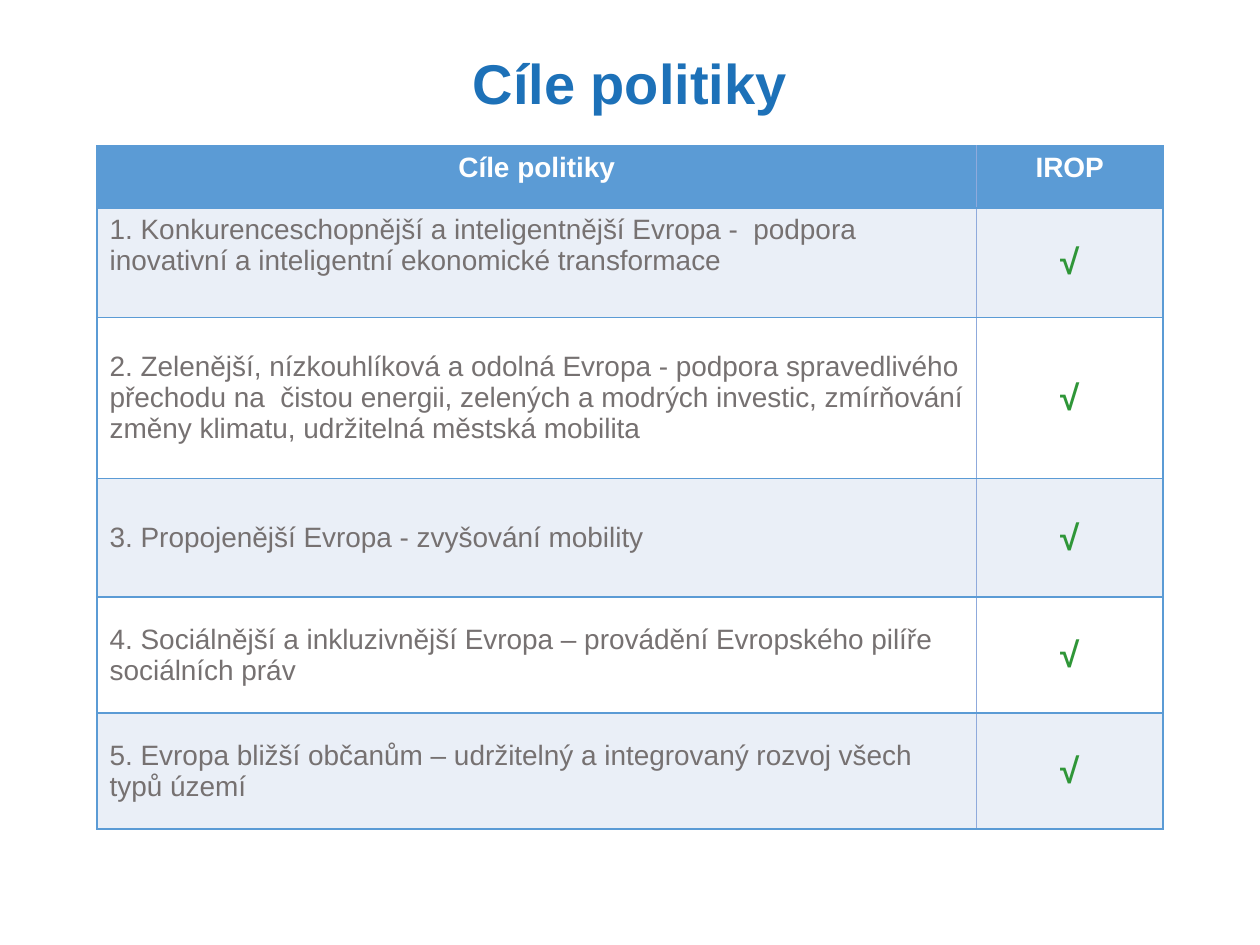
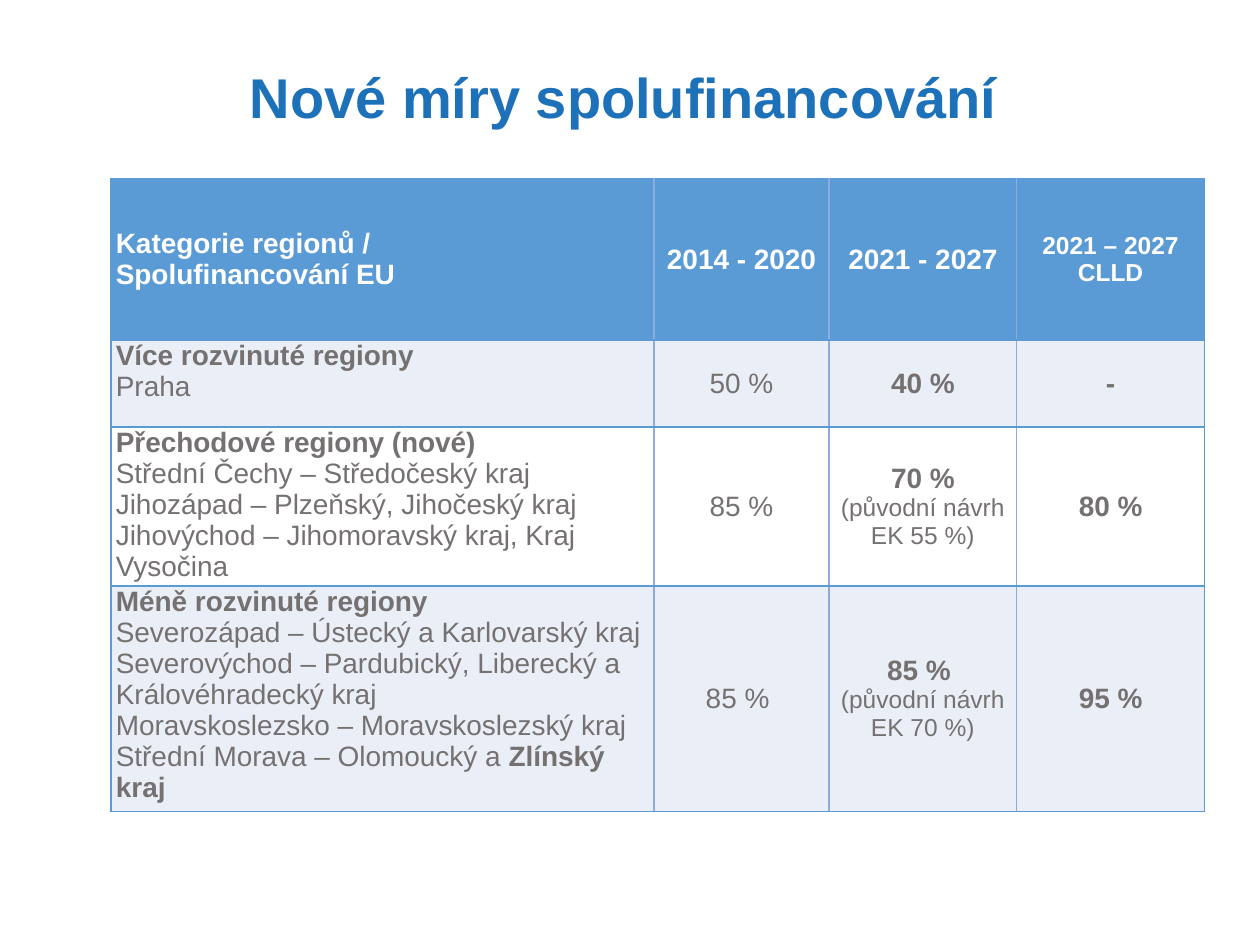
from dataclasses import dataclass

from lxml.etree import SubElement
from pptx import Presentation
from pptx.dml.color import RGBColor
from pptx.enum.text import MSO_ANCHOR as ANCHOR, MSO_AUTO_SIZE as AUTO_SIZE, PP_ALIGN as ALIGN
from pptx.oxml.ns import qn
from pptx.util import Inches, Pt

FONT = "Arial"
TITLE_BLUE = RGBColor(0x1D, 0x71, 0xB8)
HEADER_BLUE = RGBColor(0x5B, 0x9B, 0xD5)
DIVIDER_BLUE = RGBColor(0x8F, 0xAA, 0xDC)
BAND = RGBColor(0xEA, 0xEF, 0xF7)
WHITE = RGBColor(0xFF, 0xFF, 0xFF)
GREY = RGBColor(0x76, 0x71, 0x71)
GREEN = RGBColor(0x2F, 0x96, 0x38)


@dataclass
class Span:
    text: str
    bold: bool = False
    size: int = 16
    color: RGBColor = GREY


def bold(text, size=16, color=GREY):
    return Span(text, True, size, color)


def head(text, size=16):
    return bold(text, size, WHITE)


class Deck:
    def __init__(self):
        self.prs = Presentation()
        self.prs.slide_width, self.prs.slide_height = Inches(10), Inches(7.5)
        self.slide = None

    def add_slide(self, title, left, top, width, height):
        self.slide = self.prs.slides.add_slide(self.prs.slide_layouts[5])
        sp = self.slide.shapes.title
        sp.left, sp.top, sp.width, sp.height = map(Inches, (left, top, width, height))
        tf = sp.text_frame
        tf.word_wrap, tf.auto_size = True, AUTO_SIZE.NONE
        tf.vertical_anchor = ANCHOR.MIDDLE
        p = tf.paragraphs[0]
        p.line_spacing = 0.9
        self.add_spans(p, [bold(title, 32, TITLE_BLUE)], ALIGN.CENTER)

    def add_spans(self, p, spans, align):
        p.alignment = align
        for span in spans:
            for i, line in enumerate(span.text.split("\n")):
                if i:
                    p.add_line_break()
                r = p.add_run()
                r.text = line
                font = r.font
                font.name, font.size, font.bold = FONT, Pt(span.size), span.bold
                font.color.rgb = span.color

    def borders(self, cell, first, last):
        tc_pr = cell._tc.get_or_add_tcPr()
        colors = {
            "L": HEADER_BLUE if first else DIVIDER_BLUE,
            "R": HEADER_BLUE if last else DIVIDER_BLUE,
            "T": HEADER_BLUE,
            "B": HEADER_BLUE,
        }
        for side, color in colors.items():
            ln = SubElement(tc_pr, qn(f"a:ln{side}"), w=str(Pt(1)))
            fill = SubElement(ln, qn("a:solidFill"))
            SubElement(fill, qn("a:srgbClr"), val=str(color))

    def table(self, left, top, widths, heights, rows, anchors, insets=(0.1, 0.05), centered_corner=False):
        frame = self.slide.shapes.add_table(
            len(rows), len(widths), Inches(left), Inches(top),
            Inches(sum(widths)), Inches(sum(heights)))
        table = frame.table
        for column, width in zip(table.columns, widths):
            column.width = Inches(width)
        for i, (row, height) in enumerate(zip(rows, heights)):
            table.rows[i].height = Inches(height)
            for j, paragraphs in enumerate(row):
                cell = table.cell(i, j)
                self.borders(cell, j == 0, j == len(row) - 1)
                cell.fill.solid()
                cell.fill.fore_color.rgb = HEADER_BLUE if i == 0 else BAND if i % 2 else WHITE
                cell.margin_left = cell.margin_right = Inches(insets[0])
                cell.margin_top = cell.margin_bottom = Inches(insets[1])
                cell.vertical_anchor = anchors(i, j)
                centered = j > 0 or (i == 0 and centered_corner)
                tf = cell.text_frame
                for k, spans in enumerate(paragraphs):
                    p = tf.add_paragraph() if k else tf.paragraphs[0]
                    self.add_spans(p, spans, ALIGN.CENTER if centered else ALIGN.LEFT)


def policy_goals(deck):
    goals = [
        "1. Konkurenceschopnější a inteligentnější Evropa -  podpora inovativní a inteligentní "
        "ekonomické transformace",
        "2. Zelenější, nízkouhlíková a odolná Evropa - podpora spravedlivého přechodu na  čistou "
        "energii, zelených a modrých investic, zmírňování změny klimatu, udržitelná městská mobilita",
        "3. Propojenější Evropa - zvyšování mobility",
        "4. Sociálnější a inkluzivnější Evropa – provádění Evropského pilíře sociálních práv",
        "5. Evropa bližší občanům – udržitelný a integrovaný rozvoj všech typů území",
    ]
    check = [[bold("√", 20, GREEN)]]
    rows = [[[[head("Cíle politiky")]], [[head("IROP")]]]]
    rows += [[[[Span(goal)]], check] for goal in goals]

    def anchors(i, j):
        return ANCHOR.TOP if i == 0 or (i, j) == (1, 0) else ANCHOR.MIDDLE

    deck.add_slide("Cíle politiky", 0.69, 0.38, 8.62, 0.61)
    deck.table(0.77, 1.16, [6.98, 1.48], [0.49, 0.87, 1.28, 0.94, 0.92, 0.92],
               rows, anchors, centered_corner=True)


def cofinancing_rates(deck):
    def region(name, *areas):
        return [[bold(name)], *([Span(area)] for area in areas)]

    def proposal(rate, earlier):
        return [[bold(rate)], [Span(f"(původní návrh EK {earlier} %)", size=14)]]

    less_developed = region(
        "Méně rozvinuté regiony",
        "Severozápad – Ústecký a Karlovarský kraj",
        "Severovýchod – Pardubický, Liberecký a Královéhradecký kraj\n"
        "Moravskoslezsko – Moravskoslezský kraj",
        "Střední Morava – Olomoucký a ")
    less_developed[-1].append(bold("Zlínský kraj"))

    rows = [
        [[[head("Kategorie regionů /")], [head("Spolufinancování EU")]],
         [[head("2014 - 2020")]], [[head("2021 - 2027")]], [[head("2021 – 2027 CLLD", 14)]]],
        [region("Více rozvinuté regiony", "Praha"),
         [[Span("50 %")]], [[bold("40 %")]], [[bold("-")]]],
        [region("Přechodové regiony (nové)",
                "Střední Čechy – Středočeský kraj",
                "Jihozápad – Plzeňský, Jihočeský kraj",
                "Jihovýchod – Jihomoravský kraj, Kraj Vysočina"),
         [[Span("85 %")]], proposal("70 %", 55), [[bold("80 %")]]],
        [less_developed,
         [[Span("85 % ")]], proposal("85 % ", 70), [[bold("95 %")]]],
    ]

    def anchors(i, j):
        return ANCHOR.TOP if i and j == 0 else ANCHOR.MIDDLE

    deck.add_slide("Nové míry spolufinancování", 0.66, 0.29, 8.58, 1.01)
    deck.table(0.88, 1.42, [4.31, 1.39, 1.49, 1.49], [1.28, 0.69, 1.26, 1.79],
               rows, anchors, insets=(0.04, 0))


def main():
    deck = Deck()
    policy_goals(deck)
    cofinancing_rates(deck)
    deck.prs.save("out.pptx")


if __name__ == "__main__":
    main()
